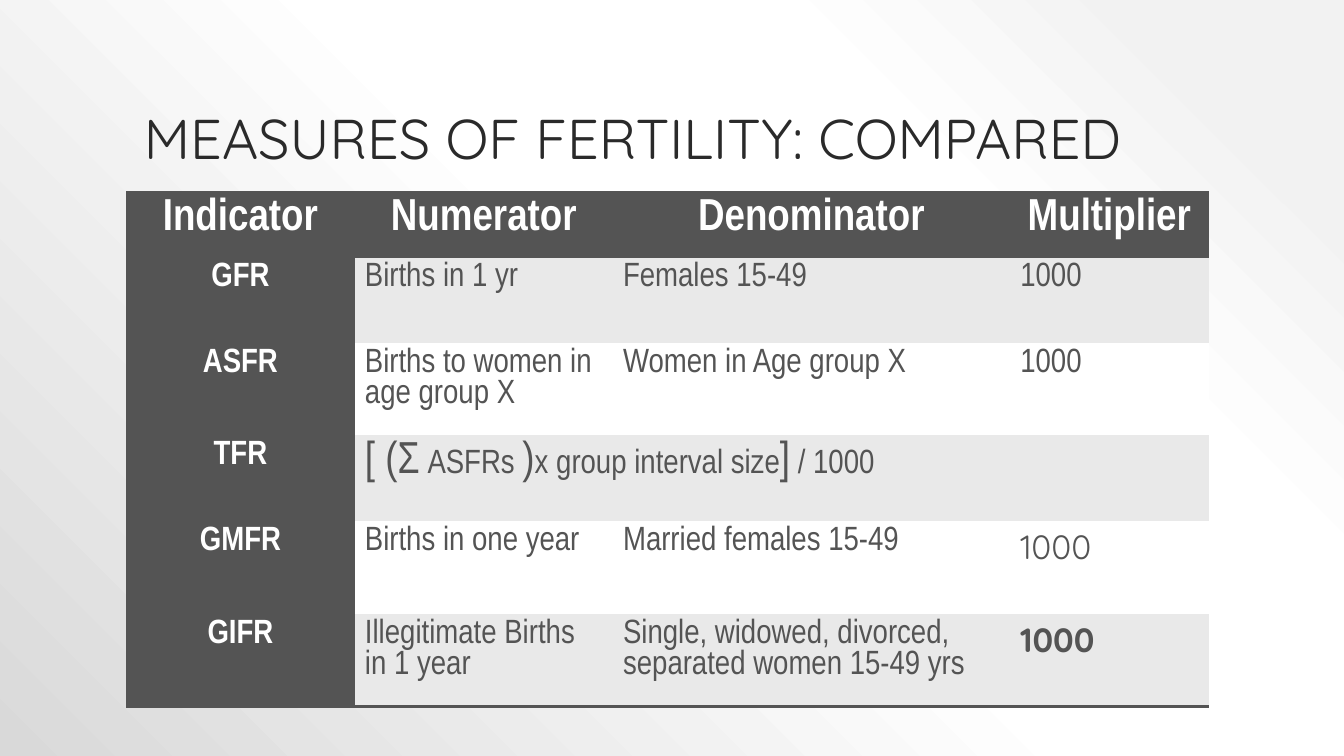
from dataclasses import dataclass

from lxml import etree
from pptx import Presentation
from pptx.dml.color import RGBColor
from pptx.enum import text
from pptx.oxml import ns, parse_xml
from pptx.util import Inches, Pt

INK = RGBColor(0x2A, 0x2A, 0x2A)
DARK = RGBColor(0x54, 0x54, 0x54)
BAND = RGBColor(0xE9, 0xE9, 0xE9)
WHITE = RGBColor(0xFF, 0xFF, 0xFF)
SILVER = RGBColor(0xF2, 0xF2, 0xF2)
SHADE = RGBColor(0xD9, 0xD9, 0xD9)
NARROW, ROUND = "Arial Narrow", "Quicksand"
PLAIN_STYLE = "{2D5ABB26-0587-4C30-8999-92F81FD0307C}"
COLUMN_WIDTHS = (2.27, 2.56, 3.94, 1.97)
ROW_HEIGHTS = (0.64, 0.85, 0.92, 0.85, 0.92, 0.92)


@dataclass(frozen=True)
class Part:
    wording: str
    size: int = 24
    font: str = NARROW
    bold: bool = False


@dataclass(frozen=True)
class Measure:
    indicator: str
    cells: tuple[tuple[Part, ...], ...]


HEADINGS = ("Indicator", "Numerator", "Denominator", "Multiplier")
MEASURES = (
    Measure("GFR", ((Part("Births in 1 yr"),), (Part("Females 15-49"),), (Part("1000"),))),
    Measure("ASFR", (
        (Part("Births to women in age group X"),),
        (Part("Women in Age group X"),),
        (Part("1000"),),
    )),
    Measure("TFR", ((
        Part("[ (Σ", 32), Part(" ASFRs "), Part(")", 32),
        Part("x group interval size"), Part("]", 32), Part(" / 1000"),
    ),)),
    Measure("GMFR", (
        (Part("Births in one year"),),
        (Part("Married females 15-49"),),
        (Part("1000", font=ROUND),),
    )),
    Measure("GIFR", (
        (Part("Illegitimate Births in 1 year"),),
        (Part("Single, widowed, divorced, separated women 15-49 yrs"),),
        (Part("1000", font=ROUND, bold=True),),
    )),
)


def set_background(s) -> None:
    s.background.fill.solid()
    solid = s.background._cSld.find(".//" + ns.qn("a:solidFill"))
    stops = "".join(
        f'<a:gs pos="{pos * 1000}"><a:srgbClr val="{color}"/></a:gs>'
        for pos, color in ((10, SILVER), (28, WHITE), (48, WHITE), (100, SHADE))
    )
    gradient = parse_xml(
        f'<a:gradFill {ns.nsdecls("a")} rotWithShape="1"><a:gsLst>{stops}</a:gsLst>'
        '<a:path path="circle"><a:fillToRect l="100000" b="100000"/></a:path></a:gradFill>'
    )
    solid.getparent().replace(solid, gradient)


def add_title(s, wording: str) -> None:
    sp = s.shapes.add_textbox(Inches(1.33), Inches(0.3), Inches(10.67), Inches(1.45))
    tf = sp.text_frame
    tf.word_wrap = True
    tf.vertical_anchor = text.MSO_ANCHOR.BOTTOM
    tf.text = wording
    p = tf.paragraphs[0]
    p.line_spacing = 0.9
    p.font.size, p.font.name = Pt(40), ROUND
    p.font.color.rgb = INK


def fill_cell(cell, parts: tuple[Part, ...], fill: RGBColor, color: RGBColor,
              centred: bool = False) -> None:
    cell.fill.solid()
    cell.fill.fore_color.rgb = fill
    p = cell.text_frame.paragraphs[0]
    if centred:
        p.alignment = text.PP_ALIGN.CENTER
    for part in parts:
        r = p.add_run()
        r.text = part.wording
        r.font.size, r.font.name, r.font.bold = Pt(part.size), part.font, part.bold
        r.font.color.rgb = color


def add_borders(cell, *tags: str) -> None:
    tc_pr = cell._tc.get_or_add_tcPr()
    for position, tag in enumerate(tags):
        tc_pr.insert(position, parse_xml(
            f'<a:{tag} {ns.nsdecls("a")} w="{Pt(2)}"><a:solidFill>'
            f'<a:srgbClr val="{DARK}"/></a:solidFill></a:{tag}>'
        ))


def add_measures_table(s) -> None:
    frame = s.shapes.add_table(
        len(ROW_HEIGHTS), len(COLUMN_WIDTHS),
        Inches(1.25), Inches(1.91), Inches(sum(COLUMN_WIDTHS)), Inches(sum(ROW_HEIGHTS)),
    )
    table = frame.table
    table.first_row = table.horz_banding = False
    table._tbl.tblPr.find(ns.qn("a:tableStyleId")).text = PLAIN_STYLE
    for column, width in zip(table.columns, COLUMN_WIDTHS):
        column.width = Inches(width)
    for row, height in zip(table.rows, ROW_HEIGHTS):
        row.height = Inches(height)

    for col, heading in enumerate(HEADINGS):
        fill_cell(table.cell(0, col), (Part(heading, 32, bold=True),), DARK, WHITE, True)
        add_borders(table.cell(0, col), "lnT", "lnB")
    for row, measure in enumerate(MEASURES, start=1):
        fill_cell(table.cell(row, 0), (Part(measure.indicator, bold=True),), DARK, WHITE, True)
        if len(measure.cells) == 1:
            table.cell(row, 1).merge(table.cell(row, len(HEADINGS) - 1))
        for col, parts in enumerate(measure.cells, start=1):
            fill_cell(table.cell(row, col), parts, BAND if row % 2 else WHITE, DARK)
    for col in range(len(HEADINGS)):
        add_borders(table.cell(len(MEASURES), col), "lnB")


def main() -> None:
    prs = Presentation()
    prs.slide_width, prs.slide_height = Inches(13.33), Inches(7.5)
    s = prs.slides.add_slide(prs.slide_layouts[6])
    set_background(s)
    add_title(s, "MEASURES OF FERTILITY: COMPARED")
    add_measures_table(s)
    prs.save("out.pptx")


if __name__ == "__main__":
    main()
